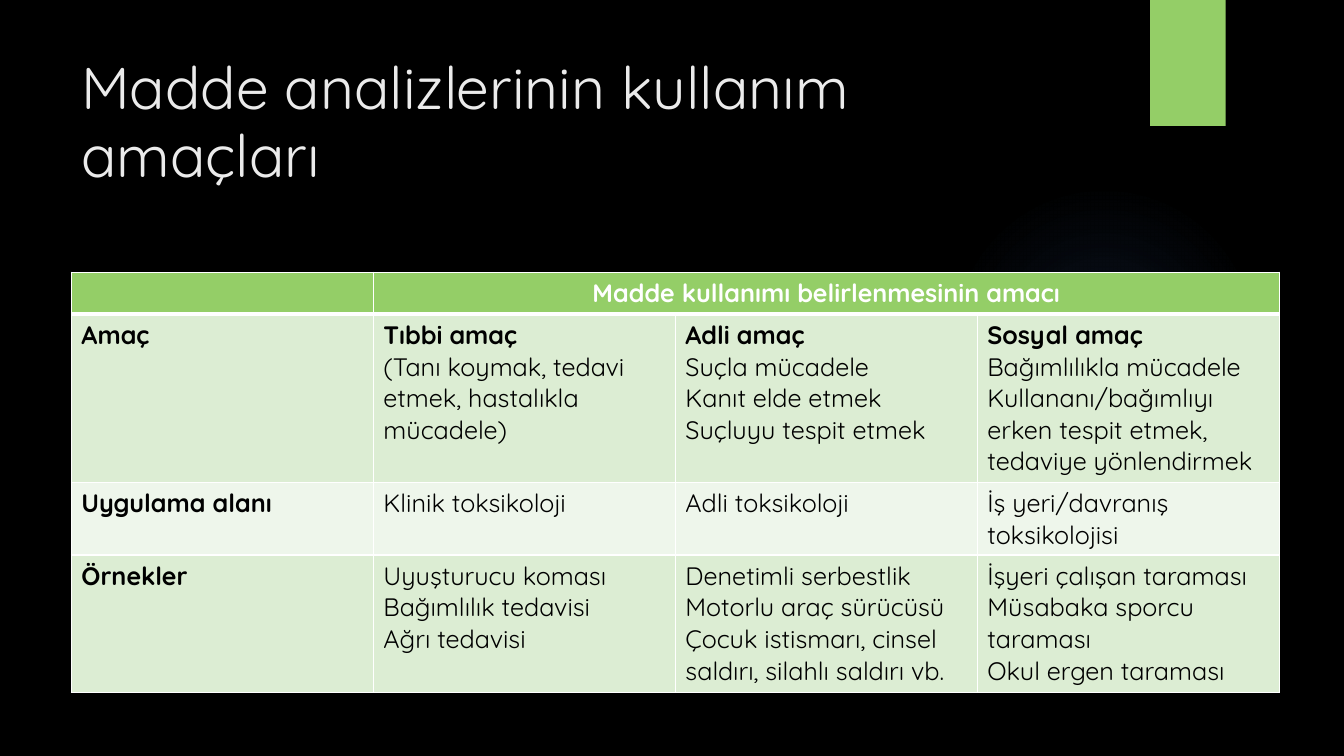
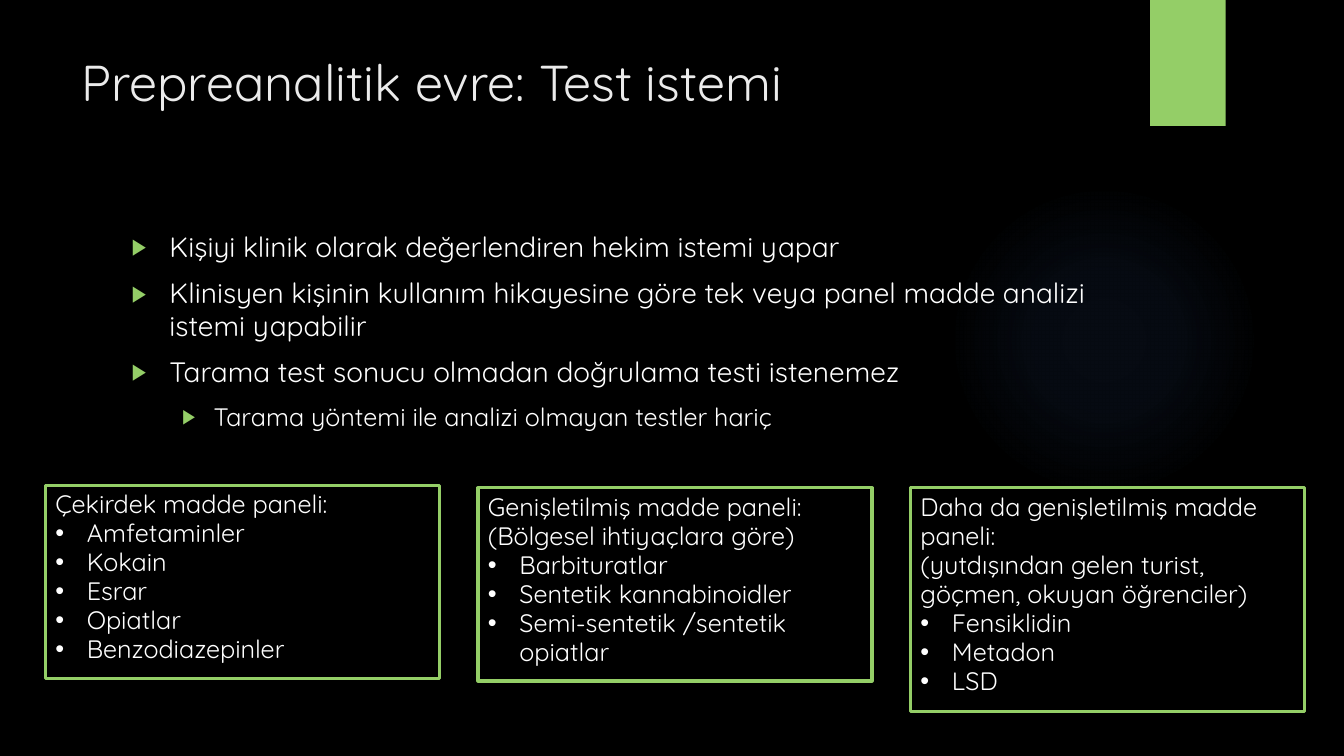
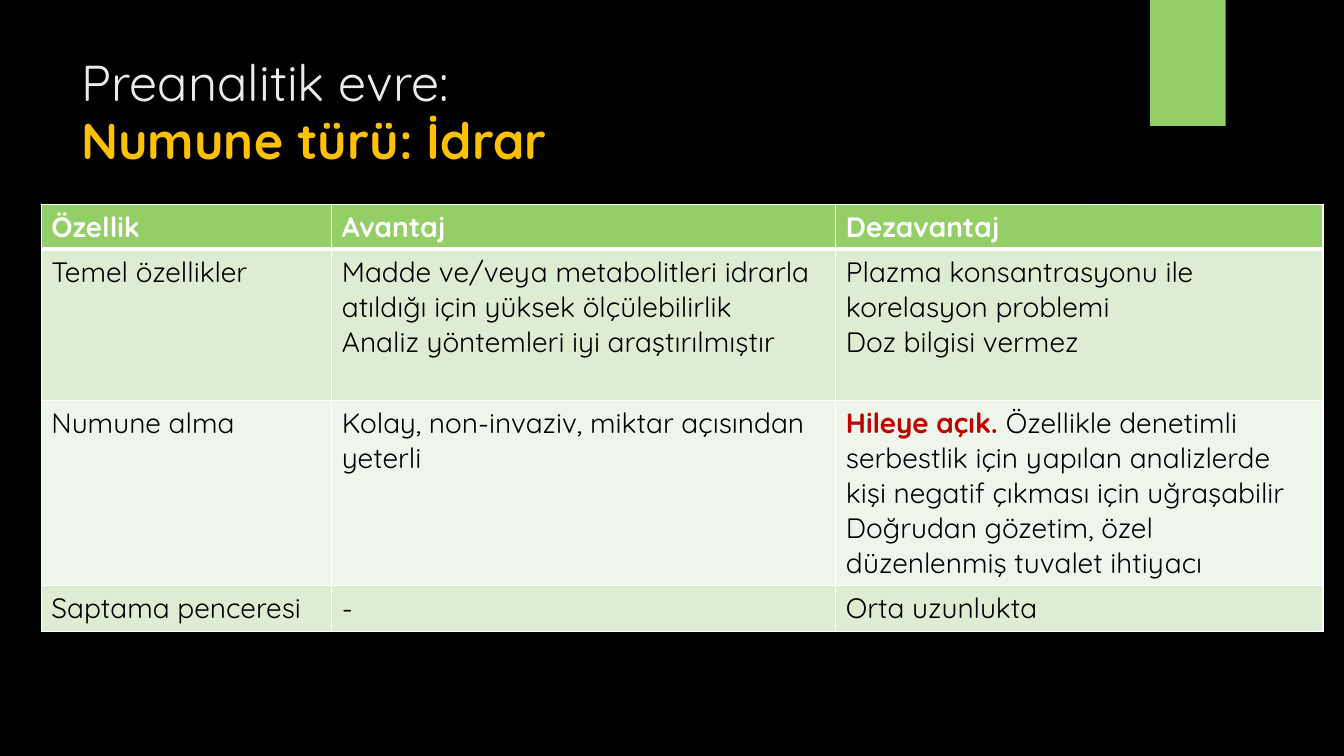
from collections import namedtuple
from dataclasses import dataclass

from lxml import etree
from pptx import Presentation
from pptx.dml.color import RGBColor
from pptx.enum.shapes import MSO_SHAPE
from pptx.enum.text import MSO_ANCHOR, PP_ALIGN
from pptx.oxml import parse_xml
from pptx.oxml.ns import nsdecls, qn
from pptx.util import Pt

RECTANGLE, ELLIPSE = MSO_SHAPE.RECTANGLE, MSO_SHAPE.OVAL
TOP, CENTER = MSO_ANCHOR.TOP, PP_ALIGN.CENTER


@dataclass(frozen=True)
class Theme:
    font: str = "Quicksand"
    background: str = "000000"
    accent: str = "94CE67"
    glow: str = "5991FF"
    title: str = "EBEBEB"
    light: str = "FFFFFF"
    dark: str = "000000"
    highlight: str = "FFC000"
    warning: str = "C00000"
    bands: tuple = ("DCEDD3", "EEF6EB")
    large_title: int = 42
    title_size: int = 36
    body_size: int = 20
    small_size: int = 18
    line_spacing: float = 0.96


THEME = Theme()
Span = namedtuple("Span", "text color bold", defaults=(None, True))
Bullet = namedtuple("Bullet", "char left hanging color percent")
Item = namedtuple("Item", "text bullet size", defaults=(None,))

ARROW = Bullet("▶", 27, 27, THEME.accent, 80)
SUB_ARROW = Bullet("▶", 58.5, 22.5, THEME.accent, 80)
DOT = Bullet("•", 22.5, 22.5, THEME.light, 100)

# Content: a line is a string, an Item with a bullet, or a list of Spans
PURPOSE_TITLE = ["Madde analizlerinin kullanım amaçları"]
PURPOSE_ROWS = [
    [[], [[Span("Madde kullanımı belirlenmesinin amacı")]], [], []],
    [
        [[Span("Amaç")]],
        [[Span("Tıbbi amaç")], "(Tanı koymak, tedavi etmek, hastalıkla mücadele)"],
        [[Span("Adli amaç")], "Suçla mücadele", "Kanıt elde etmek",
         "Suçluyu tespit etmek"],
        [[Span("Sosyal amaç")], "Bağımlılıkla mücadele",
         "Kullananı/bağımlıyı erken tespit etmek, tedaviye yönlendirmek"],
    ],
    [
        [[Span("Uygulama alanı")]],
        ["Klinik toksikoloji"],
        ["Adli toksikoloji"],
        ["İş yeri/davranış toksikolojisi"],
    ],
    [
        [[Span("Örnekler")]],
        ["Uyuşturucu koması", "Bağımlılık tedavisi", "Ağrı tedavisi"],
        ["Denetimli serbestlik", "Motorlu araç sürücüsü",
         "Çocuk istismarı, cinsel saldırı, silahlı saldırı vb."],
        ["İşyeri çalışan taraması", "Müsabaka sporcu taraması",
         "Okul ergen taraması"],
    ],
]

REQUEST_TITLE = ["Prepreanalitik evre: Test istemi"]
REQUEST_ITEMS = [
    Item("Kişiyi klinik olarak değerlendiren hekim istemi yapar", ARROW),
    Item("Klinisyen kişinin kullanım hikayesine göre tek veya panel madde "
         "analizi istemi yapabilir", ARROW),
    Item("Tarama test sonucu olmadan doğrulama testi istenemez", ARROW),
    Item("Tarama yöntemi ile analizi olmayan testler hariç", SUB_ARROW,
         THEME.small_size),
]
# Panels: top, height, headings, substances
PANELS = [
    (346.5, 138, ["Çekirdek madde paneli:"],
     ["Amfetaminler", "Kokain", "Esrar", "Opiatlar", "Benzodiazepinler"]),
    (348.5, 138, ["Genişletilmiş madde paneli:", "(Bölgesel ihtiyaçlara göre)"],
     ["Barbituratlar", "Sentetik kannabinoidler",
      "Semi-sentetik /sentetik opiatlar"]),
    (348.5, 160, ["Daha da genişletilmiş madde paneli:",
                  "(yutdışından gelen turist, göçmen, okuyan öğrenciler)"],
     ["Fensiklidin", "Metadon", "LSD"]),
]
PANEL_LEFT, PANEL_WIDTH, PANEL_STEP = 32.4, 281.5, 309

URINE_TITLE = [[Span("Preanalitik evre:\v", bold=False),
                Span("Numune türü: İdrar", THEME.highlight)]]
URINE_ROWS = [
    [[[Span("Özellik")]], [[Span("Avantaj")]], [[Span("Dezavantaj")]]],
    [
        ["Temel özellikler"],
        ["Madde ve/veya metabolitleri idrarla atıldığı için yüksek ölçülebilirlik",
         "Analiz yöntemleri iyi araştırılmıştır"],
        ["Plazma konsantrasyonu ile korelasyon problemi", "Doz bilgisi vermez"],
    ],
    [
        ["Numune alma"],
        ["Kolay, non-invaziv, miktar açısından yeterli"],
        [[Span("Hileye açık. ", THEME.warning),
          Span("Özellikle denetimli serbestlik için yapılan analizlerde kişi "
               "negatif çıkması için uğraşabilir", bold=False)],
         "Doğrudan gözetim, özel düzenlenmiş tuvalet ihtiyacı"],
    ],
    [["Saptama penceresi"], ["-"], ["Orta uzunlukta"]],
]


# Text
def rgb(color):
    return RGBColor.from_string(color)


def set_bullet(para, bullet):
    properties = para._p.get_or_add_pPr()
    properties.set("marL", str(Pt(bullet.left)))
    properties.set("indent", str(-Pt(bullet.hanging)))
    color = etree.SubElement(properties, qn("a:buClr"))
    etree.SubElement(color, qn("a:srgbClr"), val=bullet.color)
    etree.SubElement(properties, qn("a:buSzPct"), val=str(bullet.percent * 1000))
    etree.SubElement(properties, qn("a:buFont"), typeface="Arial")
    etree.SubElement(properties, qn("a:buChar"), char=bullet.char)


def write(frame, lines, size, color, line_spacing=None, gap=0):
    frame.word_wrap = True
    for index, line in enumerate(lines):
        para = frame.add_paragraph() if index else frame.paragraphs[0]
        if index and gap:
            para.space_before = Pt(gap)
        if line_spacing:
            para.line_spacing = line_spacing
        line_size = size
        if isinstance(line, Item):
            set_bullet(para, line.bullet)
            line_size = line.size or size
            line = line.text
        spans = [Span(line, bold=False)] if isinstance(line, str) else line
        for span in spans:
            run = para.add_run()
            run.text = span.text.rstrip("\v")
            if span.text.endswith("\v"):
                para.add_line_break()
            run.font.name = THEME.font
            run.font.size = Pt(line_size)
            run.font.bold = span.bold
            run.font.color.rgb = rgb(span.color or color)


def add_text(page, bounds, lines, size, color, gap=0):
    box = page.shapes.add_textbox(*map(Pt, bounds))
    box.text_frame.vertical_anchor = TOP
    write(box.text_frame, lines, size, color, THEME.line_spacing, gap)


# Parts shared by all slides
def add_plain_shape(page, kind, bounds):
    shape = page.shapes.add_shape(kind, *map(Pt, bounds))
    shape.shadow.inherit = False
    shape.fill.background()
    shape.line.fill.background()
    return shape


def add_glow(page):
    glow = add_plain_shape(page, ELLIPSE, (677.5, 132, 222, 222))
    stops = "".join(
        f'<a:gs pos="{position * 1000}"><a:srgbClr val="{THEME.glow}">'
        f'<a:alpha val="{alpha * 1000}"/></a:srgbClr></a:gs>'
        for position, alpha in ((0, 7), (36, 6), (69, 0)))
    gradient = parse_xml(
        f'<a:gradFill {nsdecls("a")} rotWithShape="1"><a:gsLst>{stops}</a:gsLst>'
        '<a:path path="circle"><a:fillToRect l="50000" t="50000" r="50000" '
        'b="50000"/></a:path></a:gradFill>')
    properties = glow._element.spPr
    properties.replace(properties.find(qn("a:noFill")), gradient)


def add_page(deck, title, title_size):
    page = deck.slides.add_slide(deck.slide_layouts[6])
    add_glow(page)
    tab = add_plain_shape(page, RECTANGLE, (821.5, 0, 54, 90))
    tab.fill.solid()
    tab.fill.fore_color.rgb = rgb(THEME.accent)
    add_text(page, (51, 36, 741, 110), title, title_size, THEME.title)
    return page


# Tables
def set_borders(cell, top, bottom):
    properties = cell._tc.get_or_add_tcPr()
    for side, width in (("L", 1), ("R", 1), ("T", top), ("B", bottom)):
        line = etree.SubElement(properties, qn(f"a:ln{side}"), w=str(Pt(width)))
        fill = etree.SubElement(line, qn("a:solidFill"))
        etree.SubElement(fill, qn("a:srgbClr"), val=THEME.light)


def add_table(page, left, top, widths, heights, rows, size):
    bounds = (left, top, sum(widths), sum(heights))
    table = page.shapes.add_table(len(rows), len(widths), *map(Pt, bounds)).table
    for column, width in zip(table.columns, widths):
        column.width = Pt(width)
    for index, (row, height) in enumerate(zip(rows, heights)):
        table.rows[index].height = Pt(height)
        header = index == 0
        band = THEME.accent if header else THEME.bands[(index - 1) % 2]
        for cell, lines in zip(table.rows[index].cells, row):
            set_borders(cell, 3 if index == 1 else 1, 3 if header else 1)
            cell.fill.solid()
            cell.fill.fore_color.rgb = rgb(band)
            write(cell.text_frame, lines, size,
                  THEME.light if header else THEME.dark)
    return table


# Slides
def build_purposes(deck):
    page = add_page(deck, PURPOSE_TITLE, THEME.large_title)
    table = add_table(page, 51, 194.5, [215.7] * 4, [30, 120, 52, 98],
                      PURPOSE_ROWS, THEME.small_size)
    heading = table.cell(0, 1)
    heading.merge(table.cell(0, 3))
    heading.text_frame.paragraphs[0].alignment = CENTER


def build_request(deck):
    page = add_page(deck, REQUEST_TITLE, THEME.title_size)
    add_text(page, (87, 162, 704, 330), REQUEST_ITEMS, THEME.body_size,
             THEME.light, gap=10)
    for index, (top, height, headings, substances) in enumerate(PANELS):
        left = PANEL_LEFT + index * PANEL_STEP
        panel = add_plain_shape(page, RECTANGLE, (left, top, PANEL_WIDTH, height))
        panel.line.color.rgb = rgb(THEME.accent)
        panel.line.width = Pt(2.25)
        panel.text_frame.vertical_anchor = TOP
        lines = headings + [Item(name, DOT) for name in substances]
        write(panel.text_frame, lines, THEME.small_size, THEME.light,
              THEME.line_spacing)
        for para in panel.text_frame.paragraphs:
            para.alignment = PP_ALIGN.LEFT


def build_urine(deck):
    page = add_page(deck, URINE_TITLE, THEME.title_size)
    add_table(page, 29.5, 146, [207.5, 360, 348], [32, 108, 132, 33],
              URINE_ROWS, THEME.body_size)


def main():
    deck = Presentation()
    deck.slide_width, deck.slide_height = Pt(960), Pt(540)
    background = deck.slide_master.background.fill
    background.solid()
    background.fore_color.rgb = rgb(THEME.background)
    build_purposes(deck)
    build_request(deck)
    build_urine(deck)
    deck.save("out.pptx")


if __name__ == "__main__":
    main()
